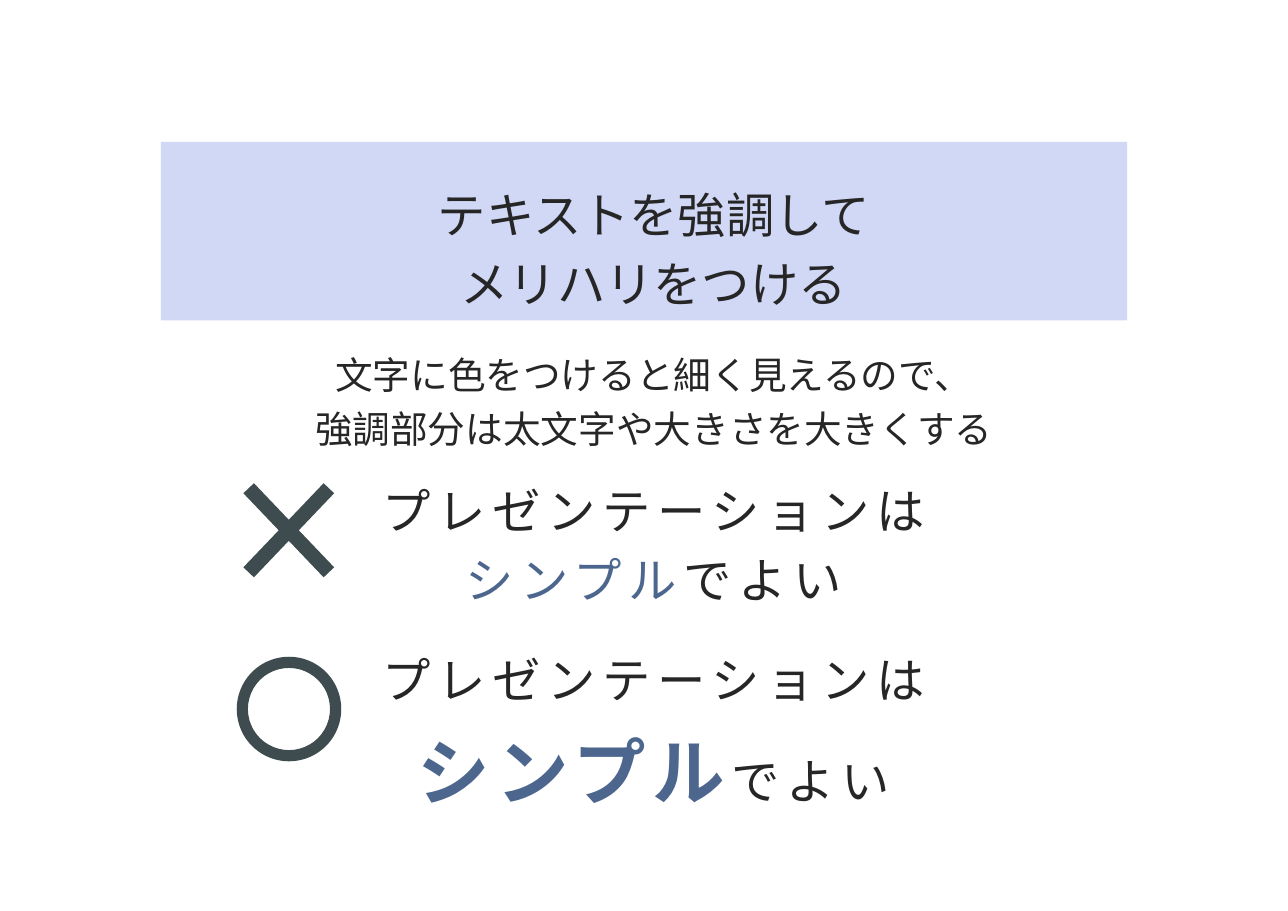
from lxml.etree import SubElement
from pptx import Presentation
from pptx.dml.color import RGBColor
from pptx.enum.shapes import MSO_SHAPE as Preset
from pptx.enum.text import MSO_ANCHOR as Anchor, PP_ALIGN as Align
from pptx.oxml.ns import qn
from pptx.util import Cm, Pt

FONT = "Noto Sans CJK JP"
INK, ACCENT, BAND, MARK = "262626", "4C668E", "D1D8F6", "3F4C4F"
BODY_SIZE, NOTE_SIZE, STRONG_SIZE = 31.6, 24.6, 47.4
TEXT_LEFT, TEXT_WIDTH = 4.42, 20.85


def color(value):
    return RGBColor.from_string(value)


def add_run(paragraph, text, size=BODY_SIZE, fill=INK, bold=False, spacing=0):
    run = paragraph.add_run()
    run.text = text
    run.font.name = FONT
    run.font.size = Pt(size)
    run.font.bold = bold
    run.font.color.rgb = color(fill)
    properties = run.font._element
    SubElement(properties, qn("a:ea")).set("typeface", FONT)
    if spacing:
        properties.set("spc", str(round(spacing * 100)))


def add_lines(slide, box, lines, pitches, top_inset=0.23):
    frame = slide.shapes.add_textbox(*map(Cm, box)).text_frame
    frame.word_wrap = True
    frame.vertical_anchor = Anchor.TOP
    frame.margin_left, frame.margin_right = Cm(0.46), Cm(0)
    frame.margin_top, frame.margin_bottom = Cm(top_inset), Cm(0)
    for index, (runs, pitch) in enumerate(zip(lines, pitches)):
        paragraph = frame.add_paragraph() if index else frame.paragraphs[0]
        paragraph.alignment = Align.CENTER
        paragraph.line_spacing = Pt(pitch)
        for text, style in runs:
            add_run(paragraph, text, **style)


def add_solid(slide, preset, box, fill, adjustment=None):
    shape = slide.shapes.add_shape(preset, *map(Cm, box))
    shape.shadow.inherit = False
    shape.fill.solid()
    shape.fill.fore_color.rgb = color(fill)
    shape.line.fill.background()
    if adjustment is not None:
        shape.adjustments[0] = adjustment


def add_title(slide, left, top, width, height):
    add_solid(slide, Preset.RECTANGLE, (left, top, width, height), BAND)
    lines = [[("テキストを強調して", {})], [("メリハリをつける", {})]]
    add_lines(slide, (TEXT_LEFT, top + 0.51, TEXT_WIDTH, 3.4), lines, (45, 45))


def add_explanation(slide, left, top, width, height):
    style = {"size": NOTE_SIZE}
    lines = [
        [("文字に色をつけると細く見えるので、", style)],
        [("強調部分は太文字や大きさを大きくする", style)],
    ]
    add_lines(slide, (left, top, width, height), lines, (35.2, 35.2), top_inset=0.16)


def add_example(slide, left, top, width, height, keyword_style, keyword_pitch):
    spaced = {"spacing": 4.4}
    lines = [
        [("プレゼンテーションは", spaced)],
        [("シンプル", {**spaced, "fill": ACCENT, **keyword_style}), ("でよい", spaced)],
    ]
    add_lines(slide, (left, top, width, height), lines, (45, keyword_pitch))


def main():
    presentation = Presentation()
    presentation.slide_width, presentation.slide_height = Cm(29.7), Cm(21)
    slide = presentation.slides.add_slide(presentation.slide_layouts[6])

    add_title(slide, 3.71, 3.27, 22.28, 4.12)
    add_explanation(slide, TEXT_LEFT, 7.75, TEXT_WIDTH, 2.72)
    add_example(slide, TEXT_LEFT, 10.62, TEXT_WIDTH, 3.4, {}, 45)
    strong = {"size": STRONG_SIZE, "bold": True}
    add_example(slide, TEXT_LEFT, 14.5, TEXT_WIDTH, 4.17, strong, 69.5)
    add_solid(slide, Preset.MATH_MULTIPLY, (4.88, 10.36, 3.56, 3.73), MARK, 0.094)
    add_solid(slide, Preset.DONUT, (5.46, 15.14, 2.41, 2.41), MARK, 0.107)
    presentation.save("out.pptx")


if __name__ == "__main__":
    main()
